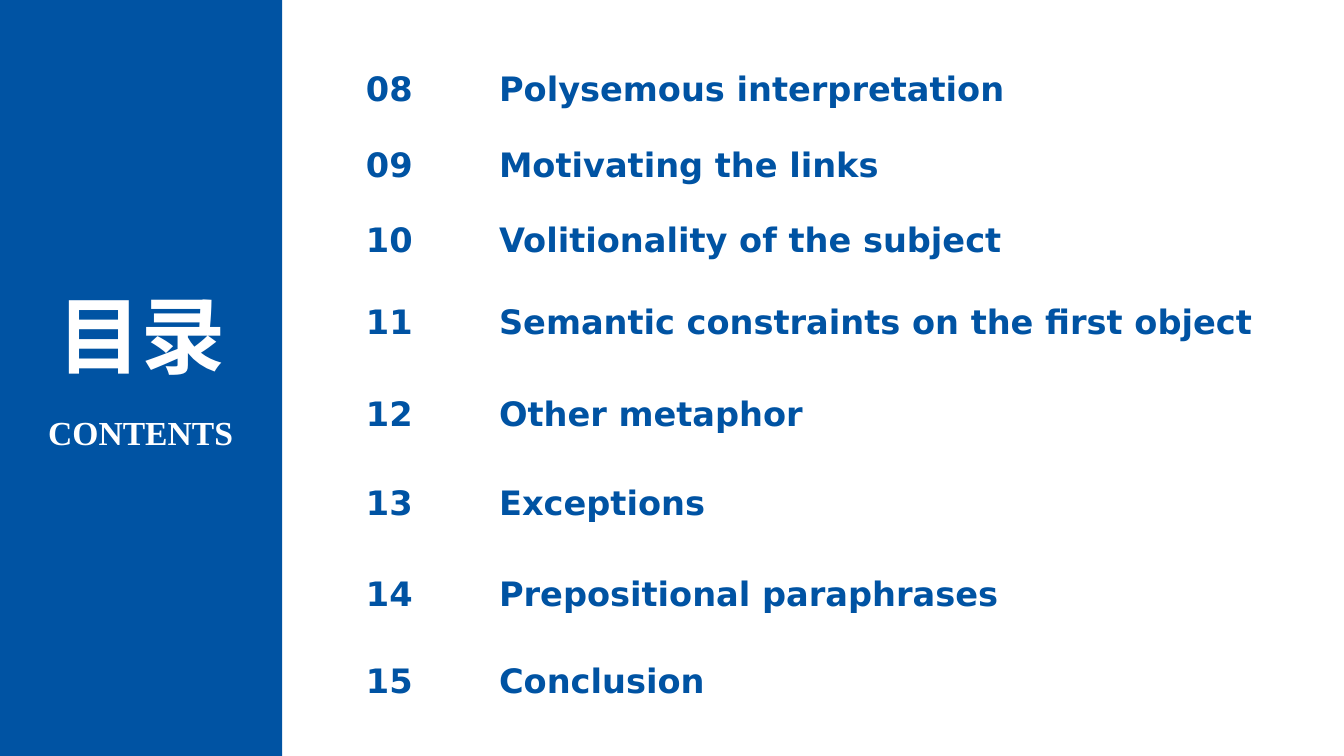
from dataclasses import dataclass

from lxml.etree import SubElement
from pptx import Presentation
from pptx.dml.color import RGBColor
from pptx.enum.shapes import MSO_SHAPE
from pptx.enum.text import MSO_ANCHOR, MSO_AUTO_SIZE, PP_ALIGN
from pptx.oxml.ns import qn
from pptx.table import _Cell
from pptx.text.text import TextFrame
from pptx.util import Inches, Pt

BLUE = "0053A3"
WHITE = "FFFFFF"
FIRST_NUMBER = 8
COLUMN_WIDTHS = (1.32, 8.06)


@dataclass(frozen=True)
class Chapter:
    title: str
    row_height: float


@dataclass(frozen=True)
class TextStyle:
    font: str
    size: float
    color: str
    align: PP_ALIGN


CHAPTERS = (
    Chapter("Polysemous interpretation", 0.75),
    Chapter("Motivating the links", 0.75),
    Chapter("Volitionality of the subject", 0.81),
    Chapter("Semantic constraints on the first object", 0.91),
    Chapter("Other metaphor", 0.88),
    Chapter("Exceptions", 0.91),
    Chapter("Prepositional paraphrases", 0.86),
    Chapter("Conclusion", 0.9),
)

TITLE_STYLE = TextStyle("Noto Sans CJK SC", 60, WHITE, PP_ALIGN.CENTER)
SUBTITLE_STYLE = TextStyle("Times New Roman", 24, WHITE, PP_ALIGN.CENTER)
CHAPTER_STYLE = TextStyle("DejaVu Sans", 24, BLUE, PP_ALIGN.LEFT)


def rgb(color: str) -> RGBColor:
    return RGBColor.from_string(color)


def write(frame: TextFrame, text: str, style: TextStyle) -> None:
    frame.word_wrap = True
    para = frame.paragraphs[0]
    para.alignment = style.align
    span = para.add_run()
    span.text = text
    font = span.font
    font.name = style.font
    font.size = Pt(style.size)
    font.bold = True
    font.color.rgb = rgb(style.color)
    # Chinese characters take the East Asian typeface
    SubElement(span._r.get_or_add_rPr(), qn("a:ea"), typeface=style.font)


def add_borders(cell: _Cell, bottom_width: float) -> None:
    properties = cell._tc.get_or_add_tcPr()
    widths = {"a:lnL": 1, "a:lnR": 1, "a:lnT": 1, "a:lnB": bottom_width}
    for tag, width in widths.items():
        line = SubElement(properties, qn(tag), w=str(Pt(width)))
        fill = SubElement(line, qn("a:solidFill"))
        SubElement(fill, qn("a:srgbClr"), val=WHITE)


def main() -> None:
    deck = Presentation()
    deck.slide_width, deck.slide_height = Inches(13.33), Inches(7.5)
    page = deck.slides.add_slide(deck.slide_layouts[5])
    shapes = page.shapes

    # Blue side band, behind the title
    band = shapes.add_shape(MSO_SHAPE.RECTANGLE, 0, 0, Inches(2.8), deck.slide_height)
    band.shadow.inherit = False
    band.fill.solid()
    band.fill.fore_color.rgb = rgb(BLUE)
    band.line.fill.background()
    title = shapes.title
    title._element.addprevious(band._element)

    # Chapter table
    table = shapes.add_table(
        len(CHAPTERS), len(COLUMN_WIDTHS), Inches(3.53), Inches(0.65),
        Inches(sum(COLUMN_WIDTHS)),
        Inches(sum(chapter.row_height for chapter in CHAPTERS)),
    ).table
    table.first_row = table.horz_banding = False
    for column, width in zip(table.columns, COLUMN_WIDTHS):
        column.width = Inches(width)
    for index, chapter in enumerate(CHAPTERS):
        row = table.rows[index]
        row.height = Inches(chapter.row_height)
        texts = (f"{FIRST_NUMBER + index:02d}", chapter.title)
        for cell, text in zip(row.cells, texts):
            write(cell.text_frame, text, CHAPTER_STYLE)
            add_borders(cell, bottom_width=3 if index == 0 else 1)
            cell.fill.solid()
            cell.fill.fore_color.rgb = rgb(WHITE)

    # Title and subtitle on the band
    title.left, title.top = Inches(0.13), Inches(2.76)
    title.width, title.height = Inches(2.54), Inches(1.11)
    title.text_frame.auto_size = MSO_AUTO_SIZE.NONE
    title.text_frame.vertical_anchor = MSO_ANCHOR.TOP
    write(title.text_frame, "目录", TITLE_STYLE)

    subtitle = shapes.add_textbox(Inches(-0.37), Inches(4.04), Inches(3.53), Inches(0.5))
    write(subtitle.text_frame, "CONTENTS", SUBTITLE_STYLE)

    deck.save("out.pptx")


if __name__ == "__main__":
    main()
